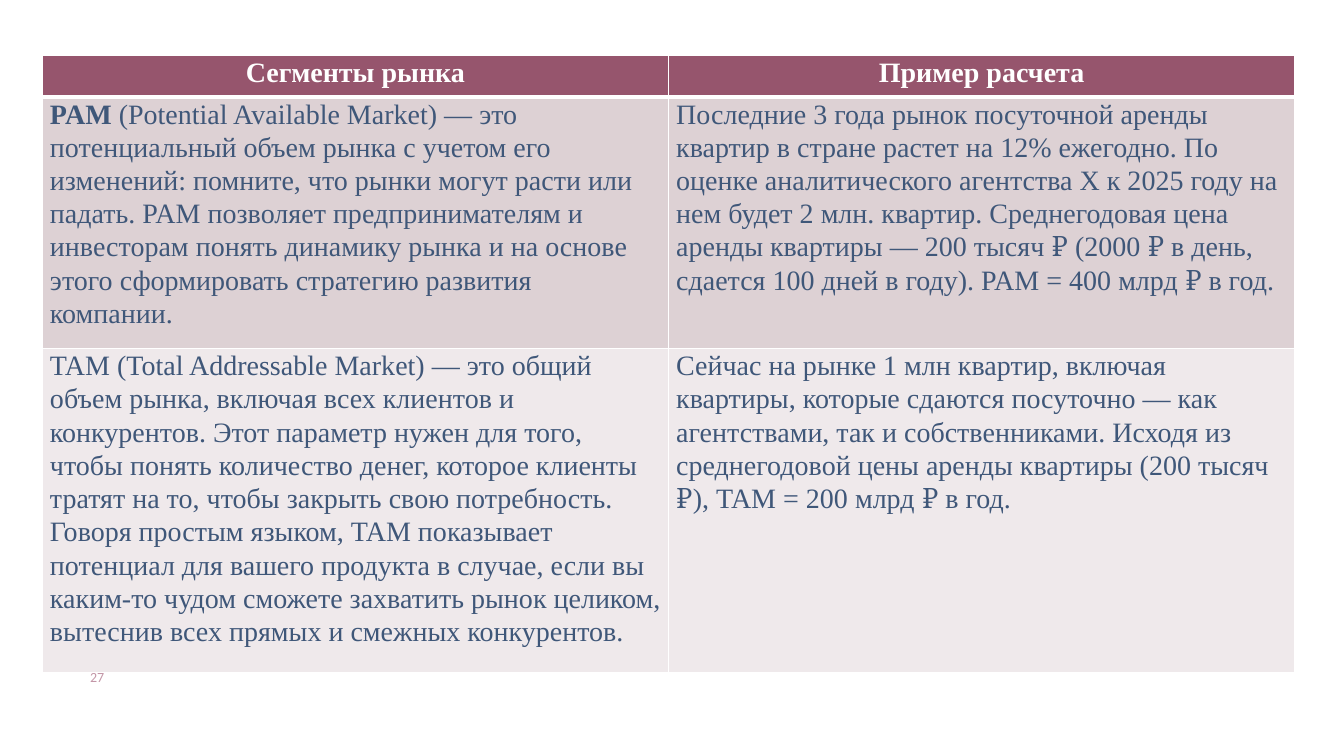
import pptx
import pptx.dml.color
import pptx.enum.text
import pptx.oxml
import pptx.oxml.ns
import pptx.util
from pptx.util import Cm, Pt

ALIGN = pptx.enum.text.PP_ALIGN


def color(value):
    return pptx.dml.color.RGBColor.from_string(value)


class MarketSlide:
    """Holds the style and the current page."""

    text_font = "Times New Roman"
    number_font = "Calibri"
    white = "FFFFFF"
    text_color = "3F5779"
    number_color = "C396A7"
    header_fill = "96556D"
    row_fills = ("DDD1D4", "EFE9EB")

    def __init__(self, deck):
        self.page = deck.slides.add_slide(deck.slide_layouts[6])

    def set_font(self, paragraph, name, size, ink):
        paragraph.font.name = name
        paragraph.font.size = Pt(size)
        paragraph.font.color.rgb = color(ink)

    def add_borders(self, cell, bottom_width):
        properties = cell._tc.get_or_add_tcPr()
        widths = {"lnL": 1, "lnR": 1, "lnT": 1, "lnB": bottom_width}
        for index, (side, width) in enumerate(widths.items()):
            line = pptx.oxml.parse_xml(
                f'<a:{side} {pptx.oxml.ns.nsdecls("a")} w="{Pt(width)}">'
                f'<a:solidFill><a:srgbClr val="{self.white}"/></a:solidFill></a:{side}>')
            properties.insert(index, line)

    def fill_cell(self, cell, spans, fill, header):
        cell.margin_left = cell.margin_right = Cm(0.19)
        cell.margin_top = cell.margin_bottom = 0
        cell.fill.solid()
        cell.fill.fore_color.rgb = color(fill)
        self.add_borders(cell, 3 if header else 1)
        para = cell.text_frame.paragraphs[0]
        para.line_spacing = 1.07
        para.alignment = ALIGN.CENTER if header else ALIGN.LEFT
        if not header:
            para.space_after = Pt(6)
        self.set_font(para, self.text_font, 20, self.white if header else self.text_color)
        for words, bold in spans:
            span = para.add_run()
            span.text = words
            # Runs carry the font too, because a table style can override it
            self.set_font(span, self.text_font, 20, self.white if header else self.text_color)
            span.font.bold = bold

    def add_table(self, left, top, column_width, row_heights, rows):
        columns = len(rows[0])
        table = self.page.shapes.add_table(
            len(rows), columns, Cm(left), Cm(top),
            Cm(column_width * columns), Cm(sum(row_heights))).table
        for column in table.columns:
            column.width = Cm(column_width)
        fills = (self.header_fill,) + self.row_fills
        for r, (height, fill) in enumerate(zip(row_heights, fills)):
            table.rows[r].height = Cm(height)
            for c, spans in enumerate(rows[r]):
                self.fill_cell(table.cell(r, c), spans, fill, r == 0)

    def add_page_number(self, number, left, top, width, height):
        box = self.page.shapes.add_textbox(Cm(left), Cm(top), Cm(width), Cm(height))
        frame = box.text_frame
        frame.word_wrap = True
        frame.margin_left = Cm(0.25)
        frame.margin_right = frame.margin_top = frame.margin_bottom = 0
        para = frame.paragraphs[0]
        para.text = number
        para.alignment = ALIGN.CENTER
        self.set_font(para, self.number_font, 10, self.number_color)


# Each cell is a list of (words, bold)
MARKET_ROWS = [
    [[("Сегменты рынка", True)], [("Пример расчета", True)]],
    [
        [("PAM", True),
         (" (Potential Available Market) — это потенциальный объем рынка с учетом его "
          "изменений: помните, что рынки могут расти или падать. PAM позволяет "
          "предпринимателям и инвесторам понять динамику рынка и на основе этого "
          "сформировать стратегию развития компании.", False)],
        [("Последние 3 года рынок посуточной аренды квартир в стране растет на 12% "
          "ежегодно. По оценке аналитического агентства X к 2025 году на нем будет "
          "2 млн. квартир. Среднегодовая цена аренды квартиры — 200 тысяч ₽ (2000 ₽ "
          "в день, сдается 100 дней в году). PAM = 400 млрд ₽ в год.", False)],
    ],
    [
        [("TAM (Total Addressable Market) — это общий объем рынка, включая всех клиентов "
          "и конкурентов. Этот параметр нужен для того, чтобы понять количество денег, "
          "которое клиенты тратят на то, чтобы закрыть свою потребность. Говоря простым "
          "языком, TAM показывает потенциал для вашего продукта в случае, если вы "
          "каким-то чудом сможете захватить рынок целиком, вытеснив всех прямых и "
          "смежных конкурентов.", False)],
        [("Сейчас на рынке 1 млн квартир, включая квартиры, которые сдаются посуточно — "
          "как агентствами, так и собственниками. Исходя из среднегодовой цены аренды "
          "квартиры (200 тысяч ₽), TAM = 200 млрд ₽ в год.", False)],
    ],
]


def main():
    deck = pptx.Presentation()
    deck.slide_width, deck.slide_height = Cm(33.87), Cm(19.05)
    slide = MarketSlide(deck)

    # Page number
    slide.add_page_number("27", 1.78, 16.84, 1.09, 0.66)

    # Market segments table
    slide.add_table(1.07, 1.4, 15.78, (1.04, 6.32, 8.15), MARKET_ROWS)

    deck.save("out.pptx")


if __name__ == "__main__":
    main()
